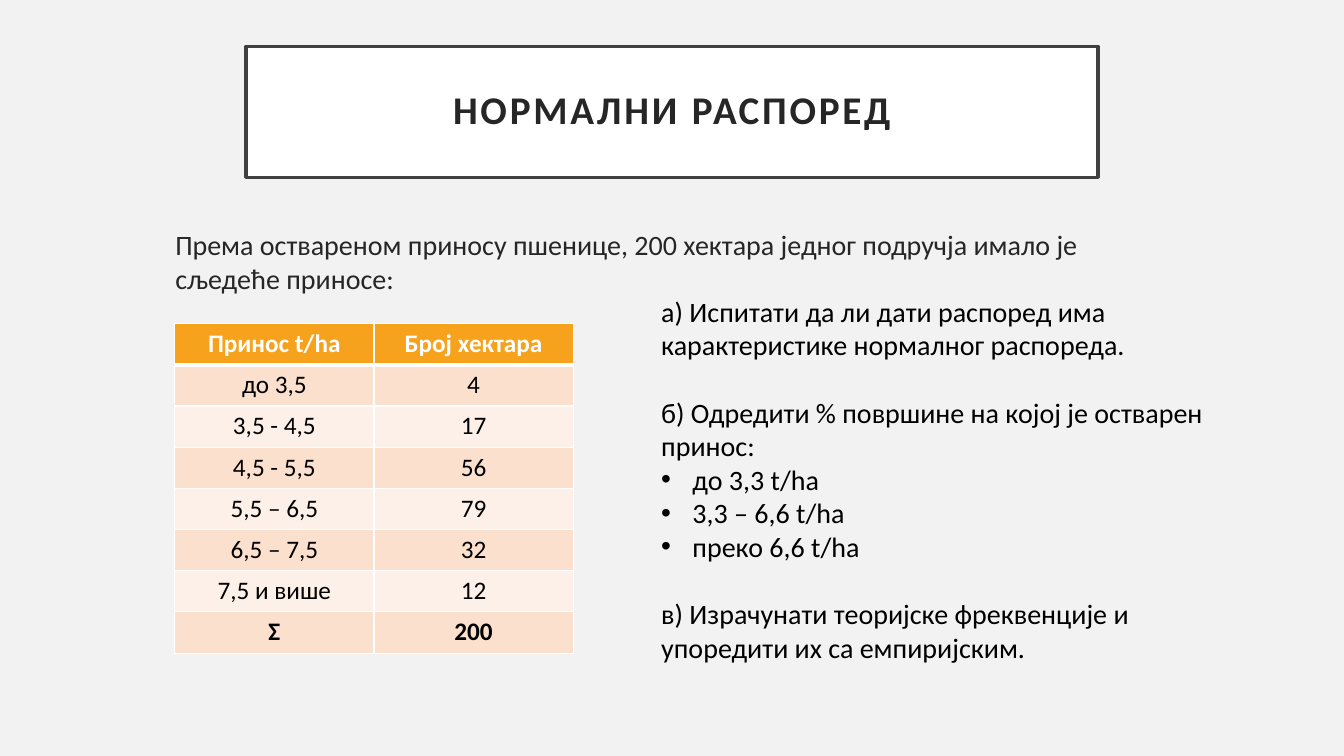
from lxml.etree import SubElement
from pptx import Presentation
from pptx.dml.color import RGBColor
from pptx.enum.shapes import MSO_SHAPE
from pptx.enum.text import MSO_ANCHOR, PP_ALIGN
from pptx.oxml.ns import qn
from pptx.util import Inches, Pt

FONT = "Calibri"
COLORS = {
    "background": "F2F2F2",
    "white": "FFFFFF",
    "frame": "404040",
    "heading": "262626",
    "text": "000000",
    "header": "F6A21D",
    "odd_row": "FBE0CD",
    "even_row": "FDF0E8",
}
YIELDS = [
    ("Принос t/ha", "Број хектара"),
    ("до 3,5", "4"),
    ("3,5 - 4,5", "17"),
    ("4,5 - 5,5", "56"),
    ("5,5 – 6,5", "79"),
    ("6,5 – 7,5", "32"),
    ("7,5 и више", "12"),
    ("Σ", "200"),
]
QUESTIONS = [
    ("а) Испитати да ли дати распоред има карактеристике нормалног распореда.", []),
    ("б) Одредити % површине на којој је остварен принос:",
     ["до 3,3 t/ha", "3,3 – 6,6 t/ha", "преко 6,6 t/ha"]),
    ("в) Израчунати теоријске фреквенције и упоредити их са емпиријским.", []),
]


def rgb(name):
    return RGBColor.from_string(COLORS[name])


def box_of(presentation, left, top, width, height):
    """Turn percentages of the slide's size into lengths."""
    across, down = presentation.slide_width / 100, presentation.slide_height / 100
    return int(left * across), int(top * down), int(width * across), int(height * down)


def style(paragraph, size, color, bold=False):
    font = paragraph.font
    font.name, font.size, font.bold = FONT, Pt(size), bold
    font.color.rgb = rgb(color)


def add_title(slide, box):
    shape = slide.shapes.add_shape(MSO_SHAPE.RECTANGLE, *box)
    shape.shadow.inherit = False
    shape.fill.solid()
    shape.fill.fore_color.rgb = rgb("white")
    shape.line.color.rgb = rgb("frame")
    shape.line.width = Pt(2.5)
    frame = shape.text_frame
    frame.word_wrap = True
    frame.vertical_anchor = MSO_ANCHOR.MIDDLE
    paragraph = frame.paragraphs[0]
    paragraph.text = "НОРМАЛНИ РАСПОРЕД"
    paragraph.alignment = PP_ALIGN.CENTER
    paragraph.line_spacing = 0.9
    style(paragraph, 28, "heading", bold=True)
    paragraph.runs[0].font._element.set("spc", "200")


def add_introduction(slide, box):
    frame = slide.shapes.add_textbox(*box).text_frame
    frame.word_wrap = True
    paragraph = frame.paragraphs[0]
    paragraph.text = ("Према оствареном приносу пшенице, 200 хектара једног подручја "
                      "имало је сљедеће приносе:")
    style(paragraph, 20, "heading")


def add_borders(cell, bottom_width):
    properties = cell._tc.get_or_add_tcPr()
    for side, width in (("L", 1), ("R", 1), ("T", 1), ("B", bottom_width)):
        line = SubElement(properties, qn(f"a:ln{side}"), w=str(Pt(width)))
        fill = SubElement(line, qn("a:solidFill"))
        SubElement(fill, qn("a:srgbClr"), val=COLORS["white"])


def add_yield_table(slide, box):
    table = slide.shapes.add_table(len(YIELDS), len(YIELDS[0]), *box).table
    last = len(YIELDS) - 1
    for row, values in enumerate(YIELDS):
        is_header = row == 0
        fill = "header" if is_header else "odd_row" if row % 2 else "even_row"
        for column, value in enumerate(values):
            cell = table.cell(row, column)
            add_borders(cell, 3 if is_header else 1)
            cell.fill.solid()
            cell.fill.fore_color.rgb = rgb(fill)
            paragraph = cell.text_frame.paragraphs[0]
            paragraph.text = value
            paragraph.alignment = PP_ALIGN.CENTER
            style(paragraph, 18, "white" if is_header else "text", row in (0, last))


def add_bullet(paragraph):
    properties = paragraph._p.get_or_add_pPr()
    indent = Inches(0.31)
    properties.set("marL", str(indent))
    properties.set("indent", str(-indent))
    SubElement(properties, qn("a:buFont"), typeface="Arial")
    SubElement(properties, qn("a:buChar"), char="•")


def add_questions(slide, box):
    frame = slide.shapes.add_textbox(*box).text_frame
    frame.word_wrap = True
    for number, (question, items) in enumerate(QUESTIONS):
        paragraph = frame.add_paragraph() if number else frame.paragraphs[0]
        paragraph.text = question
        if number:
            paragraph.space_before = Pt(24)
        style(paragraph, 20, "text")
        for item in items:
            paragraph = frame.add_paragraph()
            paragraph.text = item
            add_bullet(paragraph)
            style(paragraph, 20, "text")


def main():
    presentation = Presentation()
    presentation.slide_width, presentation.slide_height = Inches(13.33), Inches(7.5)
    slide = presentation.slides.add_slide(presentation.slide_layouts[6])
    slide.background.fill.solid()
    slide.background.fill.fore_color.rgb = rgb("background")
    add_title(slide, box_of(presentation, 18.3, 6.13, 63.4, 17.33))
    add_introduction(slide, box_of(presentation, 12.3, 29.47, 73.9, 45.2))
    add_yield_table(slide, box_of(presentation, 13, 42.8, 29.65, 43.6))
    add_questions(slide, box_of(presentation, 48.46, 38.27, 43.6, 55.2))
    presentation.save("out.pptx")


if __name__ == "__main__":
    main()
